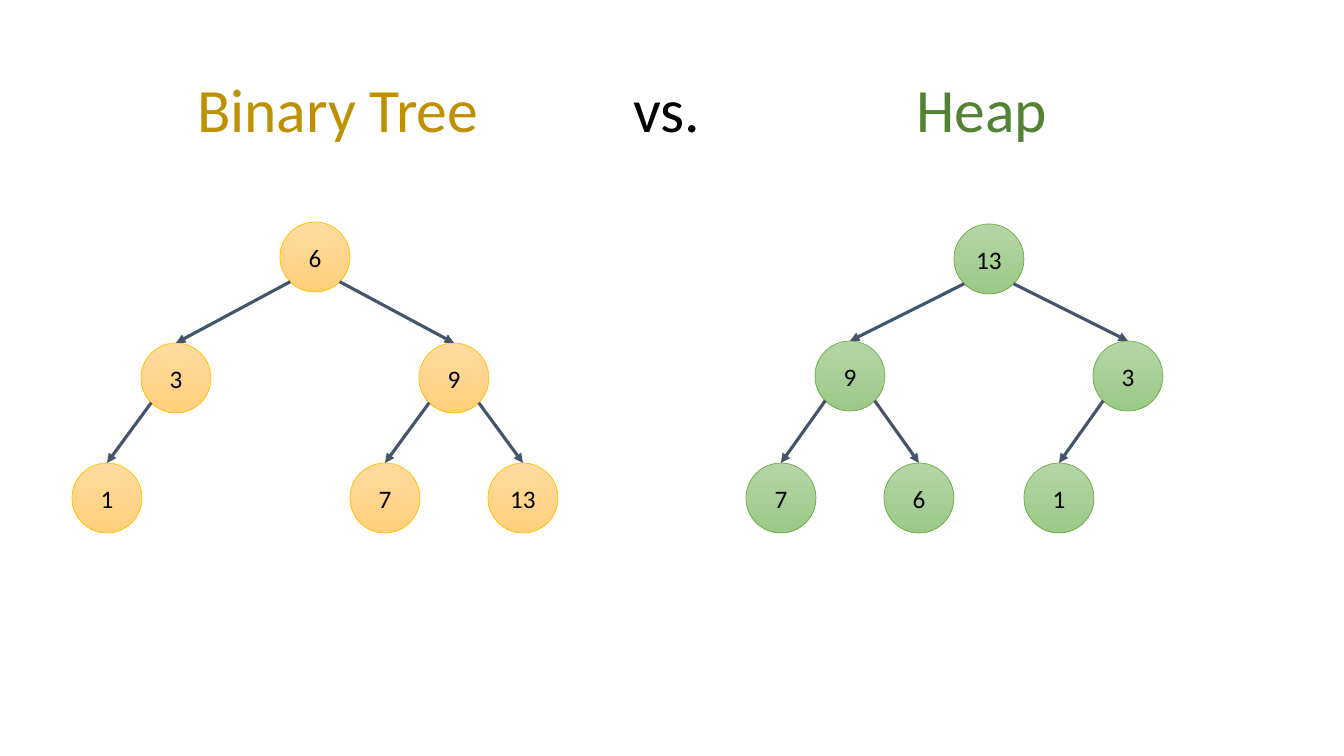
from dataclasses import dataclass
from math import sqrt

from lxml.etree import SubElement
from pptx import Presentation
from pptx.dml.color import RGBColor
from pptx.enum.shapes import MSO_CONNECTOR as CONN, MSO_SHAPE as SHAPE
from pptx.enum.text import MSO_ANCHOR as ANCHOR, MSO_AUTO_SIZE as AUTO, PP_ALIGN as ALIGN
from pptx.oxml.ns import qn
from pptx.util import Pt

EMU_PER_PX = 914400 / 100.8
NODE = 70
SPREADS = (139, 69)


@dataclass(frozen=True)
class Theme:
    font: str = "Calibri"
    title_size: int = 44
    node_size: int = 18
    text: str = "000000"
    edge: str = "44546A"
    edge_width: float = 2.25
    outline_width: float = 0.5
    tree_title: str = "BF9000"
    heap_title: str = "548235"
    tree_fill: tuple = ("FFDB9E", "FFD07C")
    tree_line: str = "FFC000"
    heap_fill: tuple = ("B5D5A7", "9CC987")
    heap_line: str = "70AD47"


THEME = Theme()


def px(n):
    return round(n * EMU_PER_PX)


def rgb(value):
    return RGBColor.from_string(value)


def set_font(p, size):
    p.font.name = THEME.font
    p.font.size = Pt(size)


def add_title(s, parts):
    sp = s.shapes.title
    sp.left, sp.top, sp.width, sp.height = px(92), px(40), px(1159), px(146)
    tf = sp.text_frame
    tf.auto_size = AUTO.NONE
    tf.vertical_anchor = ANCHOR.MIDDLE
    p = tf.paragraphs[0]
    p.alignment = ALIGN.LEFT
    p.line_spacing = 0.9
    set_font(p, THEME.title_size)
    tabs = SubElement(p._p.get_or_add_pPr(), qn("a:tabLst"))
    p._p.pPr.insert_element_before(tabs, "a:defRPr", "a:extLst")
    for text, color, stop in parts:
        SubElement(tabs, qn("a:tab"), pos=str(px(stop)), algn="l")
        r = p.add_run()
        r.text = "\t" + text
        r.font.color.rgb = rgb(color)


def add_node(s, x, y, value, fill, line):
    sp = s.shapes.add_shape(SHAPE.OVAL, px(x - NODE / 2), px(y - NODE / 2), px(NODE), px(NODE))
    sp.shadow.inherit = False
    sp.fill.gradient()
    sp.fill.gradient_angle = 270
    for stop, color in zip(sp.fill.gradient_stops, fill):
        stop.color.rgb = rgb(color)
    sp.line.color.rgb = rgb(line)
    sp.line.width = Pt(THEME.outline_width)
    tf = sp.text_frame
    tf.margin_left = tf.margin_right = tf.margin_top = tf.margin_bottom = 0
    tf.vertical_anchor = ANCHOR.MIDDLE
    p = tf.paragraphs[0]
    p.text = str(value)
    p.alignment = ALIGN.CENTER
    set_font(p, THEME.node_size)
    p.font.color.rgb = rgb(THEME.text)
    return sp


def add_edge(s, parent, child, side):
    reach = parent.width / 2 / sqrt(2)
    x = round(parent.left + parent.width / 2 + side * reach)
    y = round(parent.top + parent.height / 2 + reach)
    edge = s.shapes.add_connector(CONN.STRAIGHT, x, y, child.left, child.top)
    edge.end_connect(child, 0)
    edge.line.color.rgb = rgb(THEME.edge)
    edge.line.width = Pt(THEME.edge_width)
    SubElement(edge.line._get_or_add_ln(), qn("a:tailEnd"), type="triangle")
    SubElement(edge._element.spPr, qn("a:effectLst"))


def add_tree(s, values, root_x, levels, fill, line):
    centers, nodes = {}, {}
    for i, value in enumerate(values, start=1):
        if value is None:
            continue
        depth = i.bit_length() - 1
        side = 1 if i % 2 else -1
        centers[i] = centers[i // 2] + side * SPREADS[depth - 1] if depth else root_x
        nodes[i] = add_node(s, centers[i], levels[depth], value, fill, line)
    for i, node in nodes.items():
        if i > 1:
            add_edge(s, nodes[i // 2], node, 1 if i % 2 else -1)


def main():
    prs = Presentation()
    prs.slide_width, prs.slide_height = px(1344), px(756)
    s = prs.slides.add_slide(prs.slide_layouts[5])
    add_title(s, [
        ("Binary Tree", THEME.tree_title, 95),
        ("vs.", THEME.text, 531),
        ("Heap", THEME.heap_title, 814),
    ])
    add_tree(s, [6, 3, 9, 1, None, 7, 13], 315, (257, 378, 498),
             THEME.tree_fill, THEME.tree_line)
    add_tree(s, [13, 9, 3, 7, 6, 1], 989, (259, 376, 498),
             THEME.heap_fill, THEME.heap_line)
    prs.save("out.pptx")


if __name__ == "__main__":
    main()
